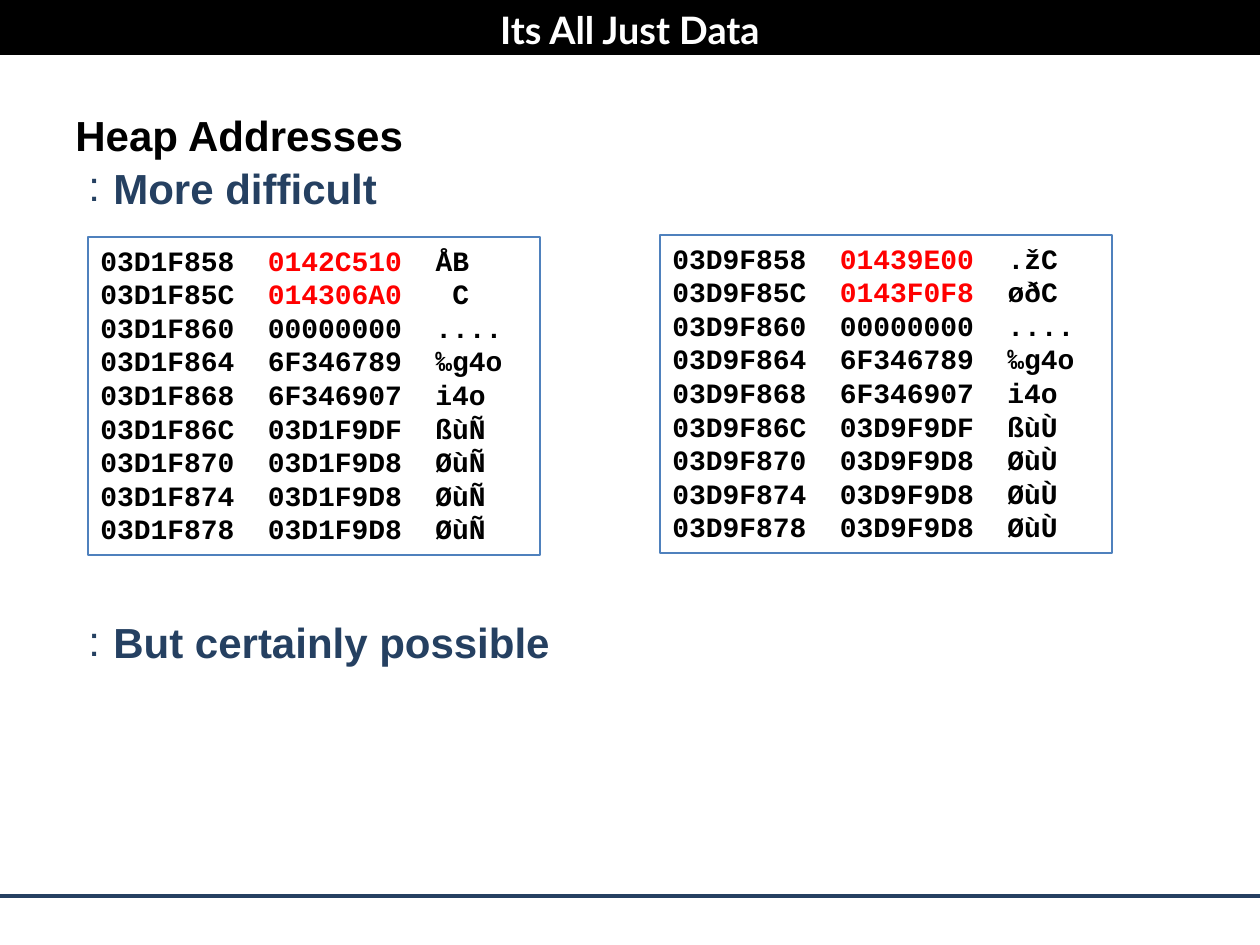
"""Build the heap addresses slide with its two memory dumps."""
from lxml import etree
from pptx import Presentation
from pptx.dml.color import RGBColor
from pptx.enum.shapes import MSO_CONNECTOR, MSO_SHAPE
from pptx.enum.text import MSO_ANCHOR, PP_ALIGN
from pptx.oxml.ns import qn
from pptx.util import Pt

RECT, STRAIGHT = MSO_SHAPE.RECTANGLE, MSO_CONNECTOR.STRAIGHT
TOP, MIDDLE = MSO_ANCHOR.TOP, MSO_ANCHOR.MIDDLE
LEFT, CENTER = PP_ALIGN.LEFT, PP_ALIGN.CENTER

THEME = {
    "black": RGBColor.from_string("000000"),
    "white": RGBColor.from_string("FFFFFF"),
    "navy": RGBColor.from_string("254061"),
    "blue": RGBColor.from_string("4F81BD"),
    "red": RGBColor.from_string("FF0000"),
    "title": 21.6,
    "body": 24,
    "dump": 16,
}
SCALE = 914400 / 126


def px(n):
    return round(n * SCALE)


def add_text(p, text, size="body", font="Arial", color="black"):
    r = p.add_run()
    r.text = text
    r.font.size = Pt(THEME[size])
    r.font.name = font
    r.font.bold = True
    r.font.color.rgb = THEME[color]


prs = Presentation()
prs.slide_width, prs.slide_height = px(1260), px(945)
s = prs.slides.add_slide(prs.slide_layouts[6])

rule = s.shapes.add_connector(STRAIGHT, 0, px(896), px(1260), px(896))
rule.line.color.rgb = THEME["navy"]
rule.line.width = Pt(2)
etree.SubElement(rule._element.spPr, qn("a:effectLst"))

bar = s.shapes.add_shape(RECT, 0, 0, px(1260), px(55))
bar.shadow.inherit = False
bar.fill.solid()
bar.fill.fore_color.rgb = THEME["black"]
bar.line.fill.background()

body = s.shapes.add_textbox(px(63), px(103), px(1134), px(783))
tf = body.text_frame
tf.word_wrap = True
add_text(tf.paragraphs[0], "Heap Addresses")
for text, gap in (("More difficult", 1.5), ("But certainly possible", 231)):
    p = tf.add_paragraph()
    p.space_before = Pt(gap)
    pPr = p._p.get_or_add_pPr()
    pPr.set("marL", str(px(38)))
    pPr.set("indent", str(-px(25)))
    etree.SubElement(pPr, qn("a:buFont"), typeface="Arial")
    etree.SubElement(pPr, qn("a:buChar"), char=":")
    add_text(p, text, color="navy")

title = s.shapes.add_textbox(0, 0, px(1260), px(59))
tf = title.text_frame
tf.word_wrap = True
tf.vertical_anchor = MIDDLE
p = tf.paragraphs[0]
p.alignment = CENTER
add_text(p, "Its All Just Data", size="title", font="Lato", color="white")

dumps = (
    (88, 237, 0x03D1F858, (
        ("0142C510", "ÅB"), ("014306A0", " C"), ("00000000", "...."),
        ("6F346789", "‰g4o"), ("6F346907", "i4o"), ("03D1F9DF", "ßùÑ"),
        *[("03D1F9D8", "ØùÑ")] * 3)),
    (660, 235, 0x03D9F858, (
        ("01439E00", ".žC"), ("0143F0F8", "øðC"), ("00000000", "...."),
        ("6F346789", "‰g4o"), ("6F346907", "i4o"), ("03D9F9DF", "ßùÙ"),
        *[("03D9F9D8", "ØùÙ")] * 3)),
)
for x, y, base, rows in dumps:
    sp = s.shapes.add_shape(RECT, px(x), px(y), px(452), px(318))
    sp.shadow.inherit = False
    sp.fill.background()
    sp.line.color.rgb = THEME["blue"]
    sp.line.width = Pt(0.75)
    tf = sp.text_frame
    tf.word_wrap = True
    tf.vertical_anchor = TOP
    for i, (value, chars) in enumerate(rows):
        p = tf.add_paragraph() if i else tf.paragraphs[0]
        p.alignment = LEFT
        value_color = "red" if i < 2 else "black"
        for text, color in ((f"{base + 4 * i:08X}  ", "black"),
                            (value, value_color),
                            (f"  {chars}", "black")):
            add_text(p, text, size="dump", font="Courier New", color=color)

prs.save("out.pptx")
